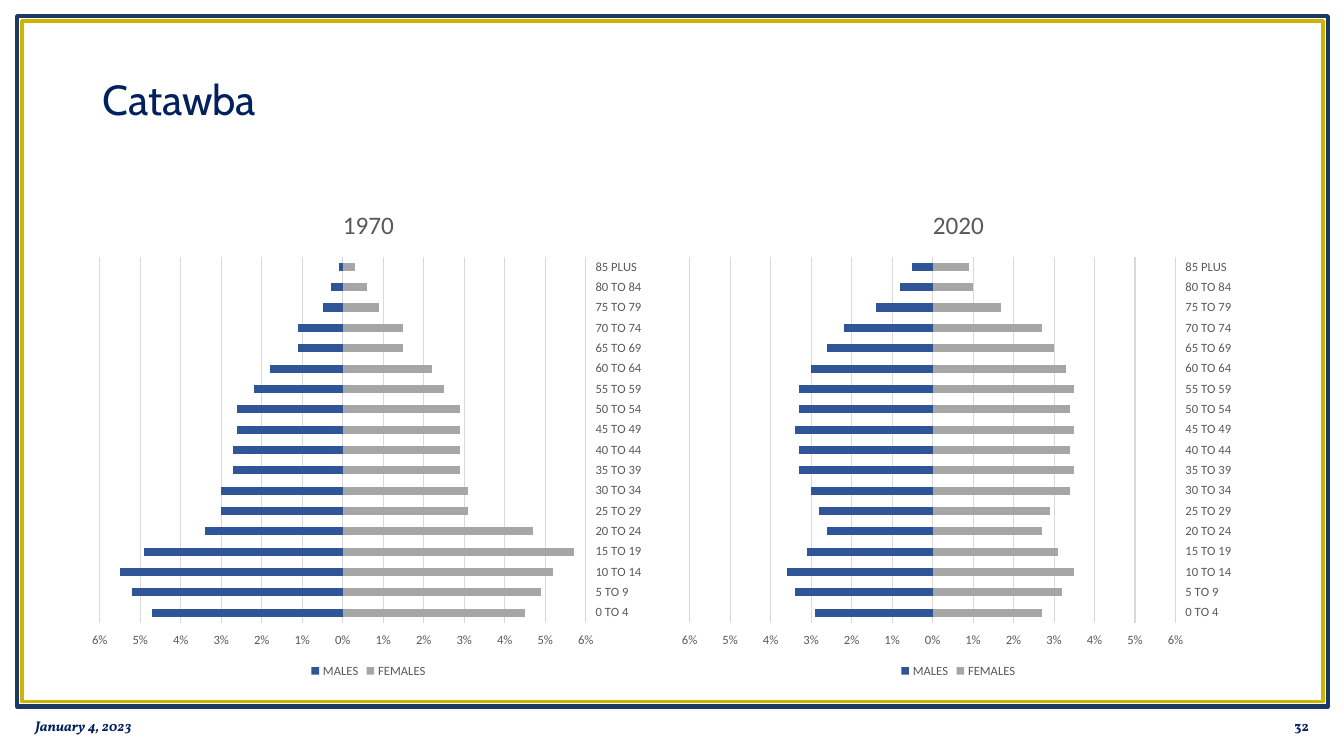
from dataclasses import dataclass

from lxml import etree
from pptx import Presentation
from pptx.chart.data import CategoryChartData
from pptx.dml.color import RGBColor
from pptx.enum.chart import XL_CHART_TYPE, XL_LEGEND_POSITION, XL_TICK_LABEL_POSITION, XL_TICK_MARK
from pptx.enum.shapes import MSO_SHAPE
from pptx.enum.text import MSO_ANCHOR, PP_ALIGN
from pptx.oxml.ns import qn
from pptx.util import Inches, Pt

RECTANGLE = MSO_SHAPE.RECTANGLE
BAR_STACKED = XL_CHART_TYPE.BAR_STACKED
LEGEND_BOTTOM = XL_LEGEND_POSITION.BOTTOM
LABELS_HIGH = XL_TICK_LABEL_POSITION.HIGH
LABELS_LOW = XL_TICK_LABEL_POSITION.LOW
NO_TICK = XL_TICK_MARK.NONE
MIDDLE = MSO_ANCHOR.MIDDLE
LEFT, RIGHT = PP_ALIGN.LEFT, PP_ALIGN.RIGHT

NAVY = RGBColor(0x00, 0x20, 0x60)
FRAME_BLUE = RGBColor(0x1C, 0x39, 0x61)
FRAME_GOLD = RGBColor(0xCC, 0xB4, 0x00)
MALE_BLUE = RGBColor(0x2F, 0x55, 0x97)
FEMALE_GRAY = RGBColor(0xA6, 0xA6, 0xA6)
LABEL_GRAY = RGBColor(0x59, 0x59, 0x59)
GRID_GRAY = RGBColor(0xD9, 0xD9, 0xD9)

AGE_GROUPS = [f"{age} TO {age + 4}" for age in range(0, 85, 5)] + ["85 PLUS"]
PLOT_AREA = {"x": 0.03, "y": 0.14, "w": 0.85, "h": 0.74}


@dataclass
class Frame:
    left: float
    top: float
    width: float
    height: float
    color: RGBColor
    weight: float


@dataclass
class Footer:
    text: str
    left: float
    align: PP_ALIGN
    italic: bool


@dataclass
class Pyramid:
    year: str
    left: float
    males: list[float]
    females: list[float]


FRAMES = [
    Frame(0.17, 0.16, 13, 6.85, FRAME_BLUE, 3),
    Frame(0.22, 0.21, 12.9, 6.75, FRAME_GOLD, 2.5),
]
FOOTERS = [
    Footer("January 4, 2023", 0.25, LEFT, True),
    Footer("32", 10.08, RIGHT, False),
]
PYRAMIDS = [
    Pyramid(
        "2020", 6.67,
        [2.9, 3.4, 3.6, 3.1, 2.6, 2.8, 3.0, 3.3, 3.3, 3.4, 3.3, 3.3, 3.0, 2.6, 2.2, 1.4, 0.8, 0.5],
        [2.7, 3.2, 3.5, 3.1, 2.7, 2.9, 3.4, 3.5, 3.4, 3.5, 3.4, 3.5, 3.3, 3.0, 2.7, 1.7, 1.0, 0.9],
    ),
    Pyramid(
        "1970", 0.82,
        [4.7, 5.2, 5.5, 4.9, 3.4, 3.0, 3.0, 2.7, 2.7, 2.6, 2.6, 2.2, 1.8, 1.1, 1.1, 0.5, 0.3, 0.1],
        [4.5, 4.9, 5.2, 5.7, 4.7, 3.1, 3.1, 2.9, 2.9, 2.9, 2.9, 2.5, 2.2, 1.5, 1.5, 0.9, 0.6, 0.3],
    ),
]


def style_font(font, name: str, size: float, color: RGBColor, bold: bool = False) -> None:
    font.name = name
    font.size = Pt(size)
    font.bold = bold
    font.color.rgb = color


def add_frame(page, frame: Frame) -> None:
    box = page.shapes.add_shape(
        RECTANGLE, Inches(frame.left), Inches(frame.top), Inches(frame.width), Inches(frame.height)
    )
    box.shadow.inherit = False
    box.fill.background()
    box.line.color.rgb = frame.color
    box.line.width = Pt(frame.weight)


def add_title(page, text: str) -> None:
    title = page.shapes.title
    title.left, title.top = Inches(0.92), Inches(0.4)
    title.width, title.height = Inches(11.5), Inches(1.23)
    title.text_frame.text = text
    title.text_frame.vertical_anchor = MIDDLE
    para = title.text_frame.paragraphs[0]
    para.alignment = LEFT
    para.line_spacing = 0.9
    style_font(para.font, "Cabin", 30, NAVY)


def add_footer(page, footer: Footer) -> None:
    box = page.shapes.add_textbox(Inches(footer.left), Inches(7), Inches(3), Inches(0.4))
    box.text_frame.word_wrap = True
    box.text_frame.vertical_anchor = MIDDLE
    para = box.text_frame.paragraphs[0]
    para.text = footer.text
    para.alignment = footer.align
    style_font(para.font, "Vollkorn", 10, NAVY, bold=True)
    para.font.italic = footer.italic


def place_plot_area(chart) -> None:
    plot_area = chart.element.find(".//" + qn("c:plotArea"))
    for old_layout in plot_area.findall(qn("c:layout")):
        plot_area.remove(old_layout)
    layout = etree.Element(qn("c:layout"))
    plot_area.insert(0, layout)
    manual = etree.SubElement(layout, qn("c:manualLayout"))
    etree.SubElement(manual, qn("c:layoutTarget")).set("val", "inner")
    for side in "xy":
        etree.SubElement(manual, qn(f"c:{side}Mode")).set("val", "edge")
    for key, share in PLOT_AREA.items():
        etree.SubElement(manual, qn(f"c:{key}")).set("val", str(share))


def add_pyramid(page, pyramid: Pyramid) -> None:
    data = CategoryChartData(number_format="0%;0%")
    data.categories = AGE_GROUPS
    data.add_series("MALES", [round(-share / 100, 3) for share in pyramid.males])
    data.add_series("FEMALES", [round(share / 100, 3) for share in pyramid.females])
    chart = page.shapes.add_chart(
        BAR_STACKED, Inches(pyramid.left), Inches(1.86), Inches(5.67), Inches(4.91), data
    ).chart
    style_font(chart.font, "Calibri", 9, LABEL_GRAY)

    chart.has_title = True
    chart.chart_title.include_in_layout = False
    heading = chart.chart_title.text_frame
    heading.text = pyramid.year
    style_font(heading.paragraphs[0].font, "Calibri", 18, LABEL_GRAY)

    chart.has_legend = True
    chart.legend.position = LEGEND_BOTTOM
    chart.legend.include_in_layout = False
    style_font(chart.legend.font, "Calibri", 9, LABEL_GRAY)

    plot = chart.plots[0]
    plot.gap_width = 150
    plot.overlap = 100
    plot.vary_by_categories = False
    for series, color in zip(plot.series, (MALE_BLUE, FEMALE_GRAY)):
        series.invert_if_negative = False
        series.format.fill.solid()
        series.format.fill.fore_color.rgb = color

    ages, shares = chart.category_axis, chart.value_axis
    for axis, position in ((ages, LABELS_HIGH), (shares, LABELS_LOW)):
        axis.major_tick_mark = NO_TICK
        axis.minor_tick_mark = NO_TICK
        axis.tick_label_position = position
        style_font(axis.tick_labels.font, "Calibri", 9, LABEL_GRAY)
    shares.minimum_scale, shares.maximum_scale = -0.06, 0.06
    shares.major_unit = 0.01
    shares.tick_labels.number_format = "0%;0%"
    shares.tick_labels.number_format_is_linked = False
    shares.format.line.fill.background()
    shares.has_major_gridlines = True
    for line in (ages.format.line, shares.major_gridlines.format.line):
        line.color.rgb = GRID_GRAY
        line.width = Pt(0.75)
    place_plot_area(chart)


def main() -> None:
    deck = Presentation()
    deck.slide_width, deck.slide_height = Inches(13.33), Inches(7.5)
    page = deck.slides.add_slide(deck.slide_layouts[5])
    for frame in FRAMES:
        add_frame(page, frame)
    add_title(page, "Catawba")
    for footer in FOOTERS:
        add_footer(page, footer)
    for pyramid in PYRAMIDS:
        add_pyramid(page, pyramid)
    deck.save("out.pptx")


if __name__ == "__main__":
    main()
